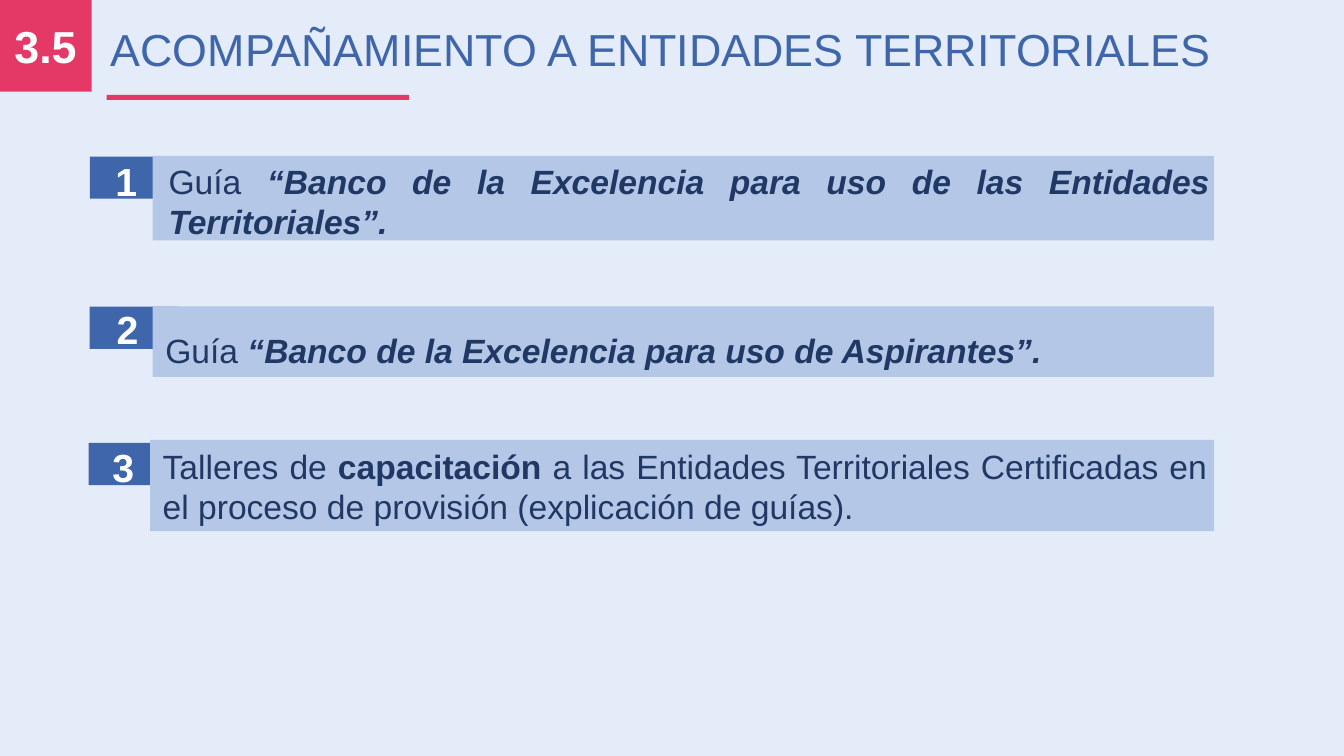
from pptx import Presentation
from pptx.dml.color import RGBColor as RGB
from pptx.enum.shapes import MSO_SHAPE as Shape
from pptx.enum.text import MSO_AUTO_SIZE as Fit, PP_ALIGN as Align
from pptx.util import Pt

PINK, BLUE, PALE, NAVY = "E43866", "3F65AA", "B4C7E7", "203864"
WHITE, SKY = "FFFFFF", "E3ECF8"


def paint(fill, color):
    """Give a fill one solid colour."""
    fill.solid()
    fill.fore_color.rgb = RGB.from_string(color)


def block(slide, box, color):
    """Draw a plain rectangle without outline."""
    rect = slide.shapes.add_shape(Shape.RECTANGLE, *map(Pt, box))
    rect.shadow.inherit = False
    rect.line.fill.background()
    paint(rect.fill, color)


def write(slide, box, *runs, size=24, color=NAVY, align=Align.LEFT, space=None):
    """Write runs of (text, style) in a box; b is bold and i is italic."""
    frame = slide.shapes.add_textbox(*map(Pt, box)).text_frame
    frame.word_wrap = True
    frame.auto_size = Fit.SHAPE_TO_FIT_TEXT
    para = frame.paragraphs[0]
    para.alignment = align
    para.line_spacing = space
    for text, style in runs:
        run = para.add_run()
        run.text = text
        font = run.font
        font.name, font.size = "Arial", Pt(size)
        font.bold, font.italic = "b" in style, "i" in style
        paint(font.fill, color)


def header(slide, num, title):
    """Draw the section number, the title and its underline."""
    block(slide, (0, 0, 65.5, 65.5), PINK)
    write(slide, (3.2, 10, 65.5, 46), (num, "b"), size=32, color=WHITE)
    write(slide, (72, 12.3, 828, 46), (title, ""), size=32, color=BLUE)
    block(slide, (76.2, 67.8, 215.8, 3.6), PINK)


def item(slide, num, tag, mark, bar, body, runs, space=None):
    """Draw a numbered tag and the bar with its text."""
    block(slide, (*tag, 63.6, 30.2), BLUE)
    write(slide, (*mark, 26.6, 41), (str(num), "b"), size=28, color=WHITE)
    block(slide, bar, PALE)
    write(slide, body, *runs, align=Align.JUSTIFY, space=space)


def main():
    """Build the slide and save it."""
    deck = Presentation()
    deck.slide_width, deck.slide_height = Pt(960), Pt(540)
    slide = deck.slides.add_slide(deck.slide_layouts[6])
    paint(slide.background.fill, SKY)
    header(slide, "3.5", "ACOMPAÑAMIENTO A ENTIDADES TERRITORIALES")
    item(slide, 1, (64.2, 111.8), (75.3, 108.7),
         (109, 111.4, 758, 60.4), (113.3, 111.4, 758, 65.5),
         [("Guía ", ""),
          ("“Banco de la Excelencia para uso de las Entidades Territoriales”.", "bi")])
    item(slide, 2, (64, 219), (76.2, 214.9),
         (109, 218.8, 758, 50.5), (111, 217.4, 756, 45.4),
         [("Guía ", ""),
          ("“Banco de la Excelencia para uso de Aspirantes”.", "bi")], space=1.5)
    item(slide, 3, (63.3, 316.3), (73.2, 312.8),
         (107.2, 314.2, 760, 65.2), (109.1, 314.8, 760, 65.5),
         [("Talleres de ", ""), ("capacitación", "b"),
          (" a las Entidades Territoriales Certificadas en el proceso de "
           "provisión (explicación de guías).", "")])
    deck.save("out.pptx")


if __name__ == "__main__":
    main()
